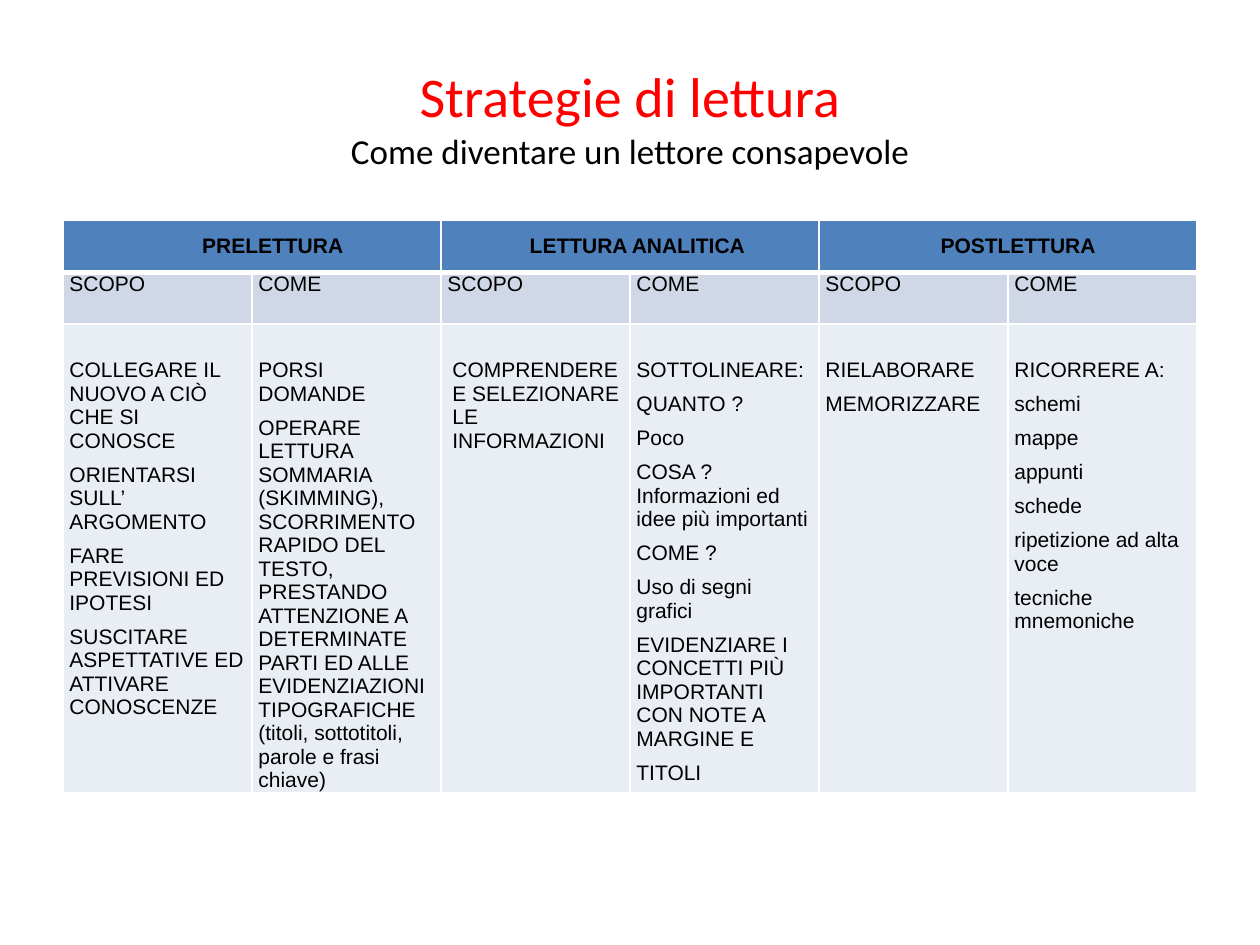
from lxml.etree import SubElement
from pptx import Presentation
from pptx.dml.color import RGBColor
from pptx.enum.text import MSO_ANCHOR, PP_ALIGN
from pptx.oxml.ns import qn
from pptx.util import Cm, Pt

COLS = 6
WIDE = 22.86
LEFT = 1.27

HEADS = [("PRELETTURA", 0.84), ("LETTURA ANALITICA", 0.3),
         ("POSTLETTURA", 0.41)]
LISTS = [
    ["COLLEGARE IL NUOVO A CIÒ CHE SI CONOSCE",
     "ORIENTARSI SULL’ ARGOMENTO",
     "FARE PREVISIONI ED IPOTESI",
     "SUSCITARE ASPETTATIVE ED ATTIVARE CONOSCENZE"],
    ["PORSI DOMANDE",
     "OPERARE LETTURA SOMMARIA (SKIMMING), SCORRIMENTO RAPIDO DEL TESTO, "
     "PRESTANDO ATTENZIONE A DETERMINATE PARTI ED ALLE EVIDENZIAZIONI "
     "TIPOGRAFICHE (titoli, sottotitoli, parole e frasi chiave)"],
    ["COMPRENDERE E SELEZIONARE LE INFORMAZIONI"],
    ["SOTTOLINEARE:", "QUANTO ?", "Poco",
     "COSA ? Informazioni ed idee più importanti",
     "COME ?", "Uso di segni grafici",
     "EVIDENZIARE I CONCETTI PIÙ IMPORTANTI CON NOTE A MARGINE E",
     "TITOLI"],
    ["RIELABORARE", "MEMORIZZARE"],
    ["RICORRERE A:", "schemi", "mappe", "appunti", "schede",
     "ripetizione ad alta voce", "tecniche mnemoniche"],
]


def color(code):
    return RGBColor.from_string(code)


def assign(thing, values):
    for name, value in values.items():
        setattr(thing, name, value)


class Deck:
    ink = "000000"
    edge = "FFFFFF"
    cell_font = {"name": "Arial", "size": Pt(12)}
    head = {"fill": "4F81BD", "bold": True, "gap": 9,
            "align": PP_ALIGN.CENTER, "anchor": MSO_ANCHOR.MIDDLE}
    label = {"fill": "D0D8E8", "align": PP_ALIGN.JUSTIFY}
    body = {"fill": "E9EDF4", "top": 0.7}

    def __init__(self):
        self.file = Presentation()
        assign(self.file, {"slide_width": Cm(25.4), "slide_height": Cm(19.05)})
        self.slide = self.file.slides.add_slide(self.file.slide_layouts[5])

    def title(self, lines, box):
        """Fill the title with (text, size, colour) lines in one paragraph."""
        shape = self.slide.shapes.title
        assign(shape, dict(zip(("left", "top", "width", "height"),
                               map(Cm, box))))
        shape.text_frame.vertical_anchor = MSO_ANCHOR.MIDDLE
        para = shape.text_frame.paragraphs[0]
        para.alignment = PP_ALIGN.CENTER
        for i, (text, size, code) in enumerate(lines):
            if i:
                para.add_line_break()
            run = para.add_run()
            run.text = text
            assign(run.font, {"name": "Calibri", "size": Pt(size)})
            run.font.color.rgb = color(code)

    def table(self, top, rows):
        frame = self.slide.shapes.add_table(
            len(rows), COLS, Cm(LEFT), Cm(top), Cm(WIDE), Cm(sum(rows)))
        grid = frame.table
        for col in grid.columns:
            col.width = Cm(WIDE / COLS)
        for row, high in zip(grid.rows, rows):
            row.height = Cm(high)
        return grid

    def border(self, cell, above, below):
        """Draw the four edges; above and below are widths in points."""
        props = cell._tc.get_or_add_tcPr()
        for side, width in zip("LRTB", (1, 1, above, below)):
            line = SubElement(props, qn(f"a:ln{side}"), w=str(Pt(width)))
            fill = SubElement(line, qn("a:solidFill"))
            SubElement(fill, qn("a:srgbClr"), val=self.edge)

    def cell(self, cell, texts, fill, align=PP_ALIGN.LEFT, bold=False, gap=3,
             top=0, anchor=MSO_ANCHOR.TOP, indent=0, above=1, below=1):
        self.border(cell, above, below)
        cell.fill.solid()
        cell.fill.fore_color.rgb = color(fill)
        assign(cell, {"margin_left": Cm(0.13), "margin_right": Cm(0.13),
                      "margin_top": Cm(top), "margin_bottom": 0,
                      "vertical_anchor": anchor})
        frame = cell.text_frame
        for i, text in enumerate(texts):
            para = frame.add_paragraph() if i else frame.paragraphs[0]
            assign(para, {"alignment": align, "space_before": Pt(gap),
                          "space_after": Pt(gap)})
            if indent:
                para._p.get_or_add_pPr().set("marL", str(Cm(indent)))
            run = para.add_run()
            run.text = text
            assign(run.font, {**self.cell_font, "bold": bold})
            run.font.color.rgb = color(self.ink)


def main():
    deck = Deck()
    deck.title([("Strategie di lettura", 32, "FF0000"),
                ("Come diventare un lettore consapevole", 20, deck.ink)],
               (LEFT, 0.76, WIDE, 3.18))
    grid = deck.table(4.45, [1.04, 1.04, 9.42])
    for i, (text, indent) in enumerate(HEADS):
        first, last = grid.cell(0, 2 * i), grid.cell(0, 2 * i + 1)
        first.merge(last)
        deck.cell(first, [text], indent=indent, below=3, **deck.head)
        deck.border(last, 1, 3)
    for i, texts in enumerate(LISTS):
        name = "COME " if i % 2 else "SCOPO"
        deck.cell(grid.cell(1, i), [name], above=3, **deck.label)
        deck.cell(grid.cell(2, i), texts, indent=0.1 if i == 2 else 0,
                  **deck.body)
    deck.file.save("out.pptx")


if __name__ == "__main__":
    main()
